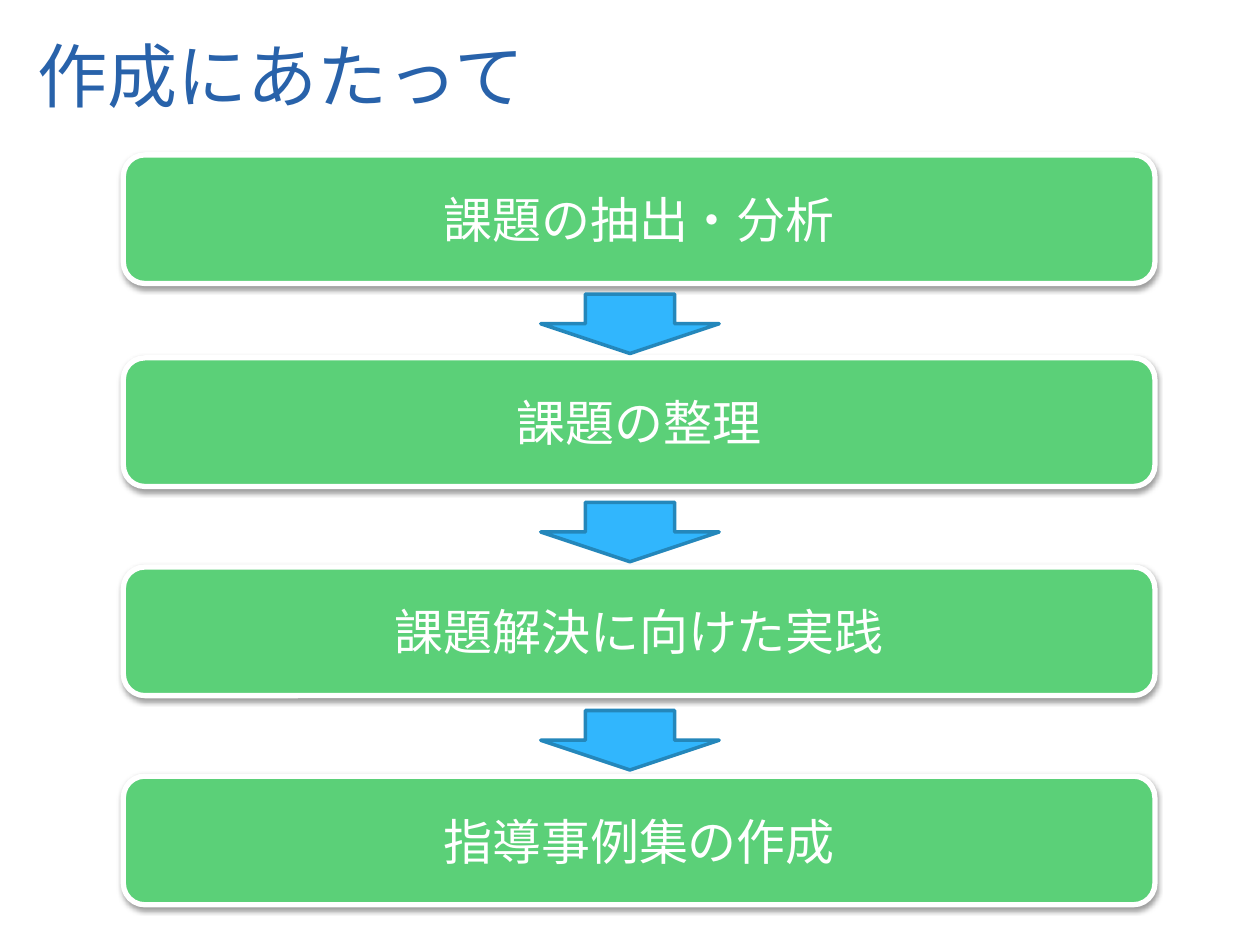
import pptx
import pptx.dml.color
import pptx.enum.shapes
import pptx.enum.text
import pptx.oxml
import pptx.oxml.ns
import pptx.util

Pt = pptx.util.Pt
FORM = pptx.enum.shapes.MSO_SHAPE
ALIGN = pptx.enum.text.PP_ALIGN
MIDDLE = pptx.enum.text.MSO_ANCHOR.MIDDLE

STEPS = (
    ("課題の抽出・分析", 88.5),
    ("課題の整理", 204.5),
    ("課題解決に向けた実践", 324),
    ("指導事例集の作成", 443.5),
)


def tint(code):
    """Turn a hex string into a colour."""
    return pptx.dml.color.RGBColor.from_string(code)


def write(frame, text, size, code, align):
    """Put one run of text in the middle of a frame."""
    frame.word_wrap = True
    frame.vertical_anchor = MIDDLE
    para = frame.paragraphs[0]
    para.alignment = align
    run = para.add_run()
    run.text = text
    run.font.name = "Calibri"
    run.font.size = Pt(size)
    run.font.color.rgb = tint(code)


def draw(slide, form, box, fill, line, width):
    """Add a flat shape with a fill and an outline."""
    shape = slide.shapes.add_shape(form, *map(Pt, box))
    shape.fill.solid()
    shape.fill.fore_color.rgb = tint(fill)
    shape.line.color.rgb = tint(line)
    shape.line.width = Pt(width)
    shape.shadow.inherit = False
    return shape


def shade(shape):
    """Give a shape a soft shadow below it."""
    space = pptx.oxml.ns.nsdecls("a")
    glow = pptx.oxml.parse_xml(
        f'<a:outerShdw {space} blurRad="{Pt(3.1)}" dist="{Pt(1.6)}" '
        'dir="5400000" rotWithShape="0"><a:srgbClr val="000000">'
        '<a:alpha val="38000"/></a:srgbClr></a:outerShdw>'
    )
    shape.element.spPr.find(pptx.oxml.ns.qn("a:effectLst")).append(glow)


def head(slide, box, text):
    """Place the title in its box."""
    title = slide.shapes.title
    title.left, title.top, title.width, title.height = map(Pt, box)
    write(title.text_frame, text, 40, "2862AA", ALIGN.LEFT)


def step(slide, box, text):
    """Place one step of the flow in its box."""
    shape = draw(slide, FORM.ROUNDED_RECTANGLE, box, "5BD078", "FFFFFF", 3)
    shade(shape)
    write(shape.text_frame, text, 28, "FFFFFF", ALIGN.CENTER)


def flow(slide, left, width, high):
    """Stack the steps and join them with arrows."""
    for text, top in STEPS:
        step(slide, (left, top, width, high), text)
    for row in range(len(STEPS) - 1):
        box = (left + 238.5, 168 + 119 * row, 102, 34)
        draw(slide, FORM.DOWN_ARROW, box, "31B6FD", "2487BB", 2)


def main():
    """Build the slide and save it."""
    deck = pptx.Presentation()
    deck.slide_width, deck.slide_height = Pt(720), Pt(540)
    slide = deck.slides.add_slide(deck.slide_layouts[5])
    head(slide, (14.5, 12, 335, 61), "作成にあたって")
    flow(slide, 70.5, 589.5, 73.5)
    deck.save("out.pptx")


if __name__ == "__main__":
    main()
